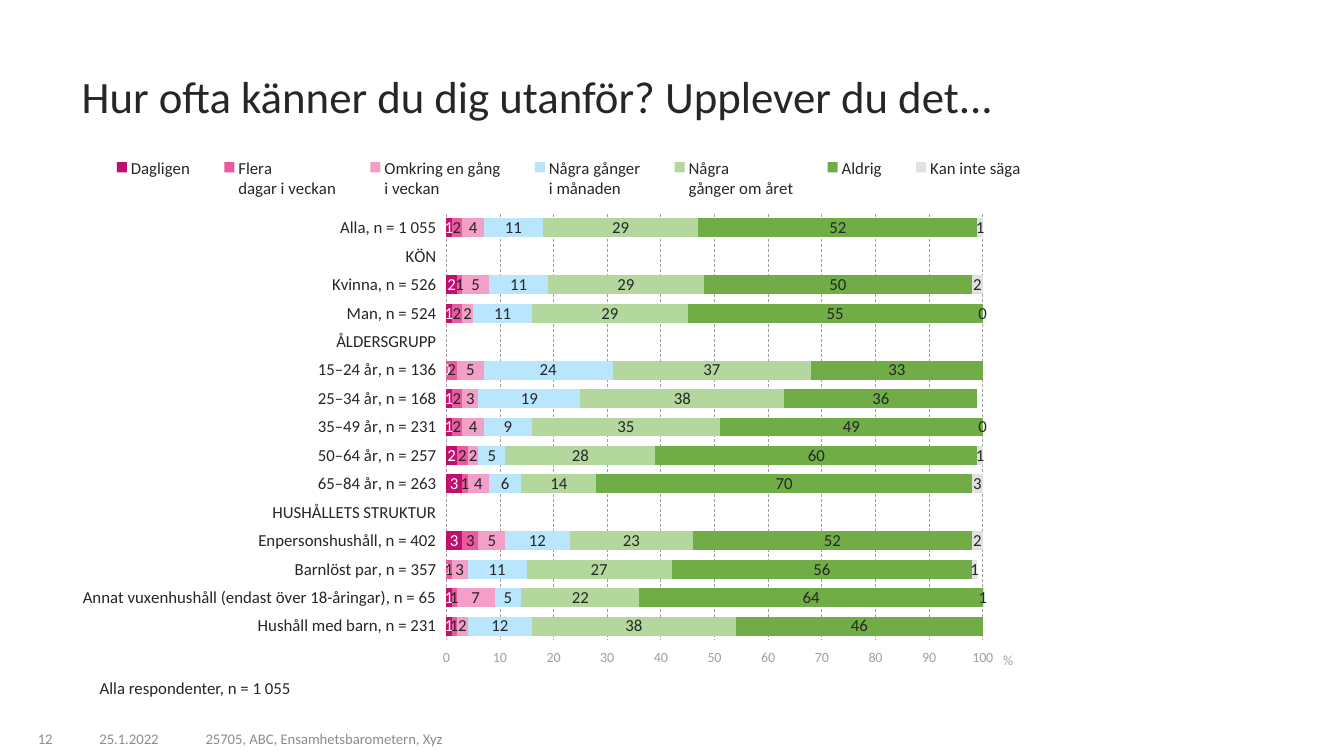
from lxml import etree
from pptx import Presentation
from pptx.chart.data import CategoryChartData
from pptx.dml.color import RGBColor
from pptx.enum.chart import XL_CHART_TYPE, XL_LEGEND_POSITION, XL_TICK_LABEL_POSITION, XL_TICK_MARK
from pptx.enum.dml import MSO_LINE
from pptx.enum.text import MSO_ANCHOR, PP_ALIGN
from pptx.oxml.ns import qn
from pptx.util import Pt

STACK = XL_CHART_TYPE.BAR_STACKED
TOP = XL_LEGEND_POSITION.TOP
LOW, HIGH = XL_TICK_LABEL_POSITION.LOW, XL_TICK_LABEL_POSITION.HIGH
NONE = XL_TICK_MARK.NONE
DASH = MSO_LINE.DASH
LEFT, MID, RIGHT = PP_ALIGN.LEFT, PP_ALIGN.CENTER, PP_ALIGN.RIGHT
UPPER, CENTER, LOWER = MSO_ANCHOR.TOP, MSO_ANCHOR.MIDDLE, MSO_ANCHOR.BOTTOM
PX = 9144
FACE = "Calibri"
HUES = {
    "ink": "262626", "foot": "8C8C8C", "axis": "A0A0A0", "white": "FFFFFF",
    "daily": "C10F70", "days": "EB599E", "week": "F39FC7", "month": "B9E6FD",
    "year": "B3D79D", "never": "70AD47", "unsure": "E1E1E1",
}
GROUPS = [
    "Alla, n = 1 055", "KÖN", "Kvinna, n = 526", "Man, n = 524", "ÅLDERSGRUPP",
    "15–24 år, n = 136", "25–34 år, n = 168", "35–49 år, n = 231",
    "50–64 år, n = 257", "65–84 år, n = 263", "HUSHÅLLETS STRUKTUR",
    "Enpersonshushåll, n = 402", "Barnlöst par, n = 357",
    "Annat vuxenhushåll (endast över 18-åringar), n = 65", "Hushåll med barn, n = 231",
]
GAP = None
SERIES = [
    ("Dagligen", "daily", "white", [1, GAP, 2, 1, GAP, 0, 1, 1, 2, 3, GAP, 3, 0, 1, 1]),
    ("Flera\ndagar i veckan", "days", "ink", [2, GAP, 1, 2, GAP, 2, 2, 2, 2, 1, GAP, 3, 1, 1, 1]),
    ("Omkring en gång\ni veckan", "week", "ink", [4, GAP, 5, 2, GAP, 5, 3, 4, 2, 4, GAP, 5, 3, 7, 2]),
    ("Några gånger\ni månaden", "month", "ink", [11, GAP, 11, 11, GAP, 24, 19, 9, 5, 6, GAP, 12, 11, 5, 12]),
    ("Några\ngånger om året", "year", "ink", [29, GAP, 29, 29, GAP, 37, 38, 35, 28, 14, GAP, 23, 27, 22, 38]),
    ("Aldrig", "never", "ink", [52, GAP, 50, 55, GAP, 33, 36, 49, 60, 70, GAP, 52, 56, 64, 46]),
    ("Kan inte säga", "unsure", "ink", [1, GAP, 2, 0, GAP, 0, GAP, 0, 1, 3, GAP, 2, 1, 1, GAP]),
]


def scale(box):
    return [side * PX for side in box]


def color(name):
    return RGBColor.from_string(HUES[name])


def style(font, size, hue):
    font.name, font.size, font.bold = FACE, Pt(size), False
    font.color.rgb = color(hue)


def write(shape, text, size, hue, align=LEFT, anchor=UPPER, lead=None):
    frame = shape.text_frame
    frame.word_wrap = True
    frame.vertical_anchor = anchor
    frame.text = text
    para = frame.paragraphs[0]
    para.alignment = align
    para.line_spacing = lead
    style(para.font, size, hue)


def place(node, index, inner=False, **spots):
    layout = node.find(qn("c:layout"))
    if layout is None:
        layout = etree.Element(qn("c:layout"))
        node.insert(index, layout)
    manual = etree.SubElement(layout, qn("c:manualLayout"))
    if inner:
        etree.SubElement(manual, qn("c:layoutTarget")).set("val", "inner")
    for key in "xy":
        etree.SubElement(manual, qn(f"c:{key}Mode")).set("val", "edge")
    for key, value in spots.items():
        etree.SubElement(manual, qn(f"c:{key}")).set("val", str(value))


def add_title(slide, box):
    title = slide.shapes.title
    title.left, title.top, title.width, title.height = scale(box)
    write(title, "Hur ofta känner du dig utanför? Upplever du det...", 32, "ink", anchor=CENTER, lead=0.9)


def format_axes(chart):
    groups, share = chart.category_axis, chart.value_axis
    groups.reverse_order = True
    groups.tick_label_position = LOW
    share.tick_label_position = HIGH
    style(groups.tick_labels.font, 12, "ink")
    style(share.tick_labels.font, 10, "axis")
    for axis in (groups, share):
        axis.major_tick_mark = axis.minor_tick_mark = NONE
        axis.format.line.fill.background()
    share.minimum_scale, share.maximum_scale, share.major_unit = 0, 100.01, 10
    share.has_major_gridlines = True
    grid = share.major_gridlines.format.line
    grid.color.rgb = color("axis")
    grid.width = Pt(0.5)
    grid.dash_style = DASH
    title = share.axis_title
    title.text_frame.text = "%"
    style(title.text_frame.paragraphs[0].font, 10, "axis")
    place(title._element, 1, x=0.95, y=0.95)


def add_bars(slide, box):
    data = CategoryChartData()
    data.categories = GROUPS
    for name, _, _, values in SERIES:
        data.add_series(name, values)
    chart = slide.shapes.add_chart(STACK, *scale(box), data).chart
    style(chart.font, 12, "ink")
    chart.has_title = False
    chart.has_legend = True
    legend = chart.legend
    legend.position = TOP
    legend.include_in_layout = False
    style(legend.font, 12, "ink")
    place(legend._element, 1, x=0.02, y=0.01, w=0.98, h=0.1)
    format_axes(chart)
    place(chart._chartSpace.chart.plotArea, 0, True, x=0.385, y=0.126, w=0.547, h=0.808)
    plot = chart.plots[0]
    plot.gap_width, plot.overlap = 50, 100
    plot.vary_by_categories = False
    for series, (_, hue, ink, _) in zip(plot.series, SERIES):
        series.format.fill.solid()
        series.format.fill.fore_color.rgb = color(hue)
        labels = series.data_labels
        labels.show_value = True
        labels.number_format = "#,##0"
        labels.number_format_is_linked = False
        style(labels.font, 12, ink)


def add_note(slide, box):
    note = slide.shapes.add_textbox(*scale(box))
    write(note, "Alla respondenter, n = 1 055", 12, "ink", lead=0.9)


def add_footer(slide, box):
    left, top, _, height = box
    parts = [
        (0, 59, "12", RIGHT),
        (63, 124, "25.1.2022", MID),
        (191, 592, "25705, ABC, Ensamhetsbarometern, Xyz", LEFT),
    ]
    for shift, width, text, align in parts:
        part = slide.shapes.add_textbox(*scale((left + shift, top, width, height)))
        write(part, text, 10.5, "foot", align, LOWER)


def main():
    deck = Presentation()
    deck.slide_width, deck.slide_height = scale((1333, 750))
    slide = deck.slides.add_slide(deck.slide_layouts[5])
    add_title(slide, (71, 64, 1207, 68))
    add_bars(slide, (68, 146, 973, 524))
    add_note(slide, (89, 670, 918, 28))
    add_footer(slide, (3, 716, 783, 30))
    deck.save("out.pptx")


if __name__ == "__main__":
    main()
